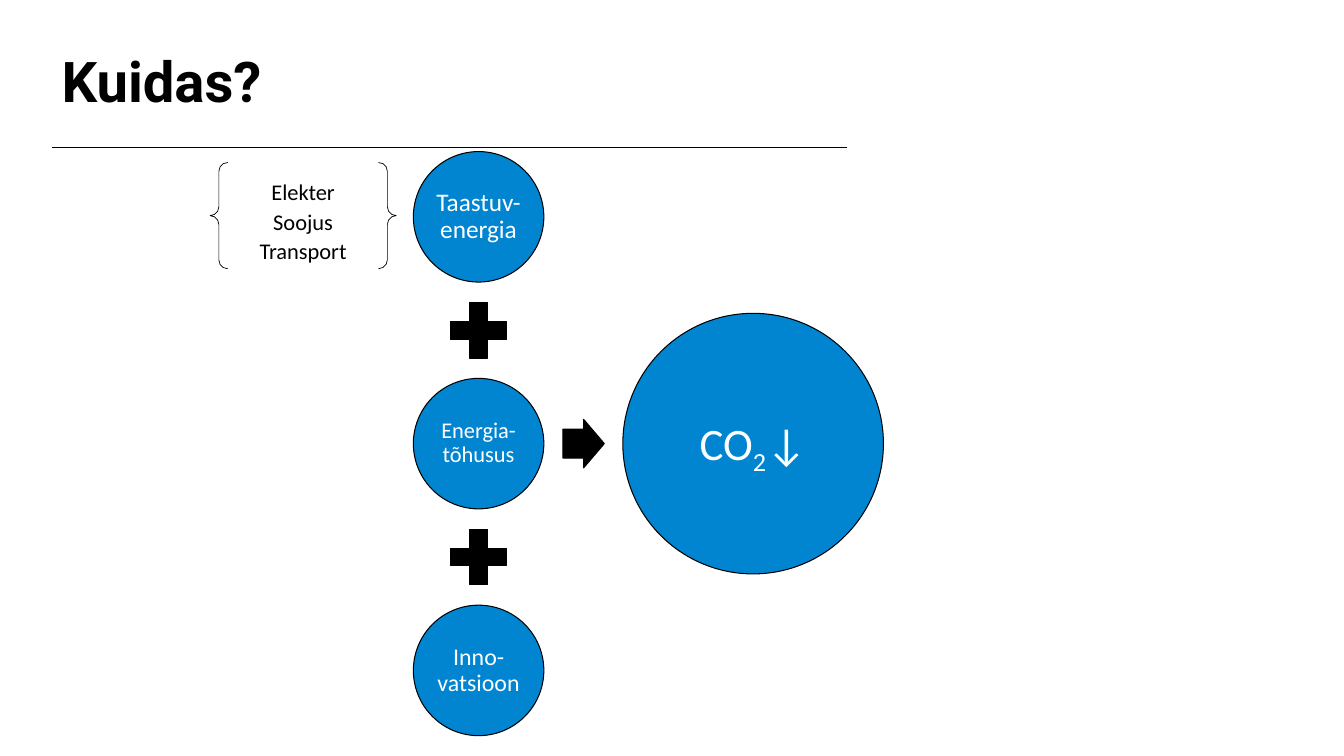
from lxml import etree
from pptx import Presentation
from pptx.dml.color import RGBColor
from pptx.enum.shapes import MSO_CONNECTOR, MSO_SHAPE
from pptx.enum.text import MSO_ANCHOR, PP_ALIGN
from pptx.oxml.ns import qn
from pptx.util import Cm, Pt

OVAL, PLUS = MSO_SHAPE.OVAL, MSO_SHAPE.MATH_PLUS
ARROW, BRACES = MSO_SHAPE.RIGHT_ARROW, MSO_SHAPE.DOUBLE_BRACE
STRAIGHT = MSO_CONNECTOR.STRAIGHT
MIDDLE = MSO_ANCHOR.MIDDLE
LEFT, CENTER = PP_ALIGN.LEFT, PP_ALIGN.CENTER
BLUE, BLACK, WHITE = "0185D1", "000000", "FFFFFF"


def add_figure(kind, center_x, center_y, width, height, fill=None, line_width=0.75):
    figure = page.shapes.add_shape(
        kind, Cm(center_x - width / 2), Cm(center_y - height / 2), Cm(width), Cm(height))
    figure.shadow.inherit = False
    if fill:
        figure.fill.solid()
        figure.fill.fore_color.rgb = RGBColor.from_string(fill)
    else:
        figure.fill.background()
    figure.line.color.rgb = RGBColor.from_string(BLACK)
    figure.line.width = Pt(line_width)
    return figure


def write(box, paragraphs, size, color, spacing=0.9, align=CENTER, name="Calibri",
          bold=False, inset=None):
    frame = box.text_frame
    frame.word_wrap = True
    frame.vertical_anchor = MIDDLE
    if inset is not None:
        for side in ("left", "right", "top", "bottom"):
            setattr(frame, "margin_" + side, Cm(inset))
    for index, pieces in enumerate(paragraphs):
        para = frame.add_paragraph() if index else frame.paragraphs[0]
        para.alignment = align
        para.line_spacing = spacing
        for text in pieces:
            span = para.add_run()
            span.text = text
            for key, value in {"name": name, "size": Pt(size), "bold": bold}.items():
                setattr(span.font, key, value)
            span.font.color.rgb = RGBColor.from_string(color)


deck = Presentation()
deck.slide_width, deck.slide_height = Cm(33.78), Cm(19)
page = deck.slides.add_slide(deck.slide_layouts[6])

# Title and rule
title = page.shapes.add_textbox(Cm(1.3), Cm(1.27), Cm(22), Cm(1.7))
write(title, [["Kuidas?"]], 40, BLACK, align=LEFT, name="Roboto", bold=True)
rule = page.shapes.add_connector(STRAIGHT, Cm(1.3), Cm(3.7), Cm(21.3), Cm(3.7))
rule.line.color.rgb = RGBColor.from_string(BLACK)
rule.line.width = Pt(0.75)
etree.SubElement(rule.element.spPr, qn("a:effectLst"))

# Column of measures joined by plus signs
column_x, first_y, step = 12.03, 5.45, 5.7
measures = [("Taastuv-energia", 18, 0.08), ("Energia-tõhusus", 16, 0.05),
            ("Inno-vatsioon", 17, 0.05)]
for index, (label, size, inset) in enumerate(measures):
    center_y = first_y + index * step
    if index:
        add_figure(PLUS, column_x, center_y - step / 2, 1.9, 1.9, BLACK)
    circle = add_figure(OVAL, column_x, center_y, 3.28, 3.28, BLUE)
    write(circle, [[label]], size, WHITE, inset=inset)

# Arrow to the result
result_y = first_y + step
arrow = add_figure(ARROW, 14.67, result_y, 1.04, 1.22, BLACK)
arrow.adjustments[0] = 0.6
result = add_figure(OVAL, 18.93, result_y, 6.55, 6.55, BLUE)
write(result, [["CO", "2", "↓"]], 32, WHITE, inset=0.1)
subscript = result.text_frame.paragraphs[0].runs[1]
subscript.font._element.set("baseline", "-25000")

# Energy uses in braces
braces = add_figure(BRACES, 7.62, 5.42, 4.68, 2.67, line_width=0.5)
write(braces, [["Elekter"], ["Soojus"], ["Transport"]], 16, BLACK, spacing=1.1)

deck.save("out.pptx")
